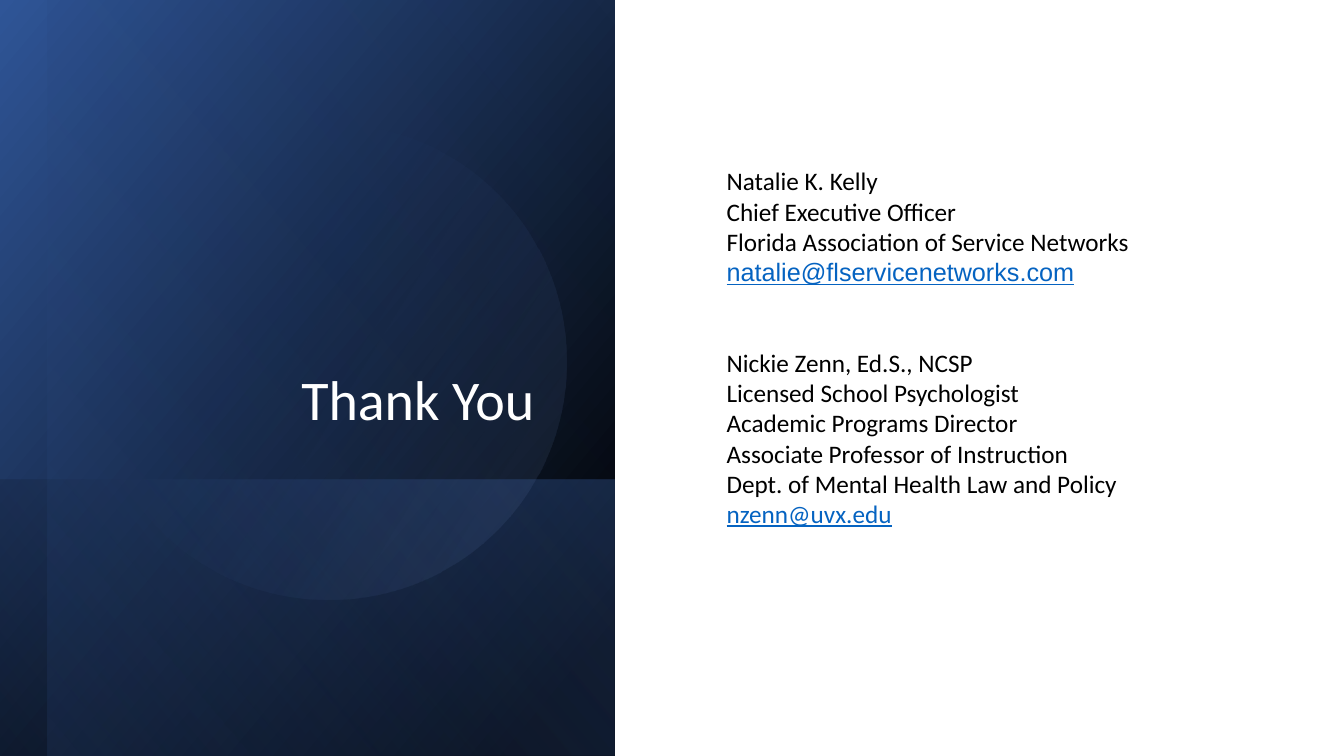
from dataclasses import dataclass

from lxml import etree
from pptx import Presentation
from pptx import util as u
from pptx.dml.color import RGBColor
from pptx.enum import shapes, text
from pptx.oxml import ns

# Grid: columns and rows of a tenth of an inch
COLUMNS, ROWS = 133.33, 75
CELL = u.Inches(0.1)
LINE_PITCH = 21.6
LINK_BLUE = "0563C1"


@dataclass
class Stop:
    place: int
    color: str
    opacity: int = 100


@dataclass
class Panel:
    kind: shapes.MSO_SHAPE
    center: tuple[float, float]
    size: tuple[float, float]  # before rotation
    rotation: float
    mirrored: bool
    angle: int
    stops: list[Stop]


@dataclass
class Line:
    words: str
    font: str = "Calibri"
    is_link: bool = False
    rows_before: int = 0


BAND_LEFT = 4.7  # left edge of the lighter overlay
BAND_RIGHT = 61
OVERLAY = BAND_RIGHT - BAND_LEFT
FOOT = 27.4
RECTANGLE, OVAL = shapes.MSO_SHAPE.RECTANGLE, shapes.MSO_SHAPE.OVAL

PANELS = [
    Panel(RECTANGLE, (BAND_RIGHT / 2, ROWS / 2), (ROWS, BAND_RIGHT), 90, True, 50,
          [Stop(8, "000000"), Stop(100, "2F5597")]),
    Panel(RECTANGLE, (BAND_RIGHT / 2, ROWS - FOOT / 2), (FOOT, BAND_RIGHT), 90, True, 130,
          [Stop(2, "4472C4", 29), Stop(100, "000000", 30)]),
    Panel(RECTANGLE, (BAND_LEFT + OVERLAY / 2, ROWS / 2), (ROWS, OVERLAY), 90, True, 130,
          [Stop(0, "000000", 0), Stop(99, "4472C4", 11)]),
    Panel(OVAL, (32.6, 35.9), (47.2, 47.2), 101.6, False, 290,
          [Stop(39, "4472C4", 0), Stop(100, "8FAADC", 15)]),
]

CONTACTS = [
    Line("Natalie K. Kelly"),
    Line("Chief Executive Officer"),
    Line("Florida Association of Service Networks"),
    Line("natalie@flservicenetworks.com", "Arial", True),
    Line("Nickie Zenn, Ed.S., NCSP", rows_before=2),
    Line("Licensed School Psychologist"),
    Line("Academic Programs Director"),
    Line("Associate Professor of Instruction"),
    Line("Dept. of Mental Health Law and Policy"),
    Line("nzenn@uvx.edu", is_link=True),
]


def cells(count: float) -> int:
    return round(count * CELL)


def color(code: str) -> RGBColor:
    return RGBColor.from_string(code)


def fill_gradient(shape, angle: int, stops: list[Stop]) -> None:
    """Give the shape a linear gradient with see-through stops."""
    shape.fill.gradient()
    gradient = shape._element.spPr.find(ns.qn("a:gradFill"))
    for child in list(gradient):
        gradient.remove(child)
    gradient.set("rotWithShape", "1")
    stop_list = etree.SubElement(gradient, ns.qn("a:gsLst"))
    for stop in stops:
        mark = etree.SubElement(stop_list, ns.qn("a:gs"), pos=str(stop.place * 1000))
        tint = etree.SubElement(mark, ns.qn("a:srgbClr"), val=stop.color)
        etree.SubElement(tint, ns.qn("a:alpha"), val=str(stop.opacity * 1000))
    etree.SubElement(gradient, ns.qn("a:lin"), ang=str(angle * 60000), scaled="0")


def draw_panel(page, panel: Panel) -> None:
    (x, y), (width, height) = panel.center, panel.size
    shape = page.shapes.add_shape(panel.kind, cells(x - width / 2), cells(y - height / 2),
                                  cells(width), cells(height))
    shape.shadow.inherit = False
    shape.line.fill.background()
    shape.rotation = panel.rotation
    if panel.mirrored:
        shape._element.spPr.xfrm.set("flipH", "1")
    fill_gradient(shape, panel.angle, panel.stops)


def add_text(page, left: float, top: float, width: float, height: float,
             anchor: text.MSO_ANCHOR, words: str):
    box = page.shapes.add_textbox(cells(left), cells(top), cells(width), cells(height))
    frame = box.text_frame
    frame.word_wrap = True
    frame.vertical_anchor = anchor
    frame.text = words
    return frame


def style_span(span, font: str, size: int, code: str, underline: bool = False) -> None:
    span.font.name = font
    span.font.size = u.Pt(size)
    span.font.color.rgb = color(code)
    span.font.underline = underline


def draw_title(page) -> None:
    frame = add_text(page, 9, 6.4, 46.3, 37, text.MSO_ANCHOR.BOTTOM, "Thank You")
    frame.margin_right = cells(2.3)
    para = frame.paragraphs[0]
    para.alignment = text.PP_ALIGN.RIGHT
    para.line_spacing = 0.9
    style_span(para.runs[0], "Calibri", 40, "FFFFFF")


def draw_contacts(page) -> None:
    frame = add_text(page, 71.1, 7.1, 53.2, 60.7, text.MSO_ANCHOR.MIDDLE,
                     "\n".join(line.words for line in CONTACTS))
    frame.margin_bottom = cells(6.5)
    for para, line in zip(frame.paragraphs, CONTACTS):
        para.line_spacing = u.Pt(LINE_PITCH)
        para.space_before = u.Pt(line.rows_before * LINE_PITCH)
        style_span(para.runs[0], line.font, 18,
                   LINK_BLUE if line.is_link else "000000", line.is_link)


def main() -> None:
    deck = Presentation()
    deck.slide_width, deck.slide_height = cells(COLUMNS), cells(ROWS)
    page = deck.slides.add_slide(deck.slide_layouts[6])

    # Dark band on the left
    for panel in PANELS:
        draw_panel(page, panel)

    # Wording
    draw_title(page)
    draw_contacts(page)
    deck.save("out.pptx")


if __name__ == "__main__":
    main()
